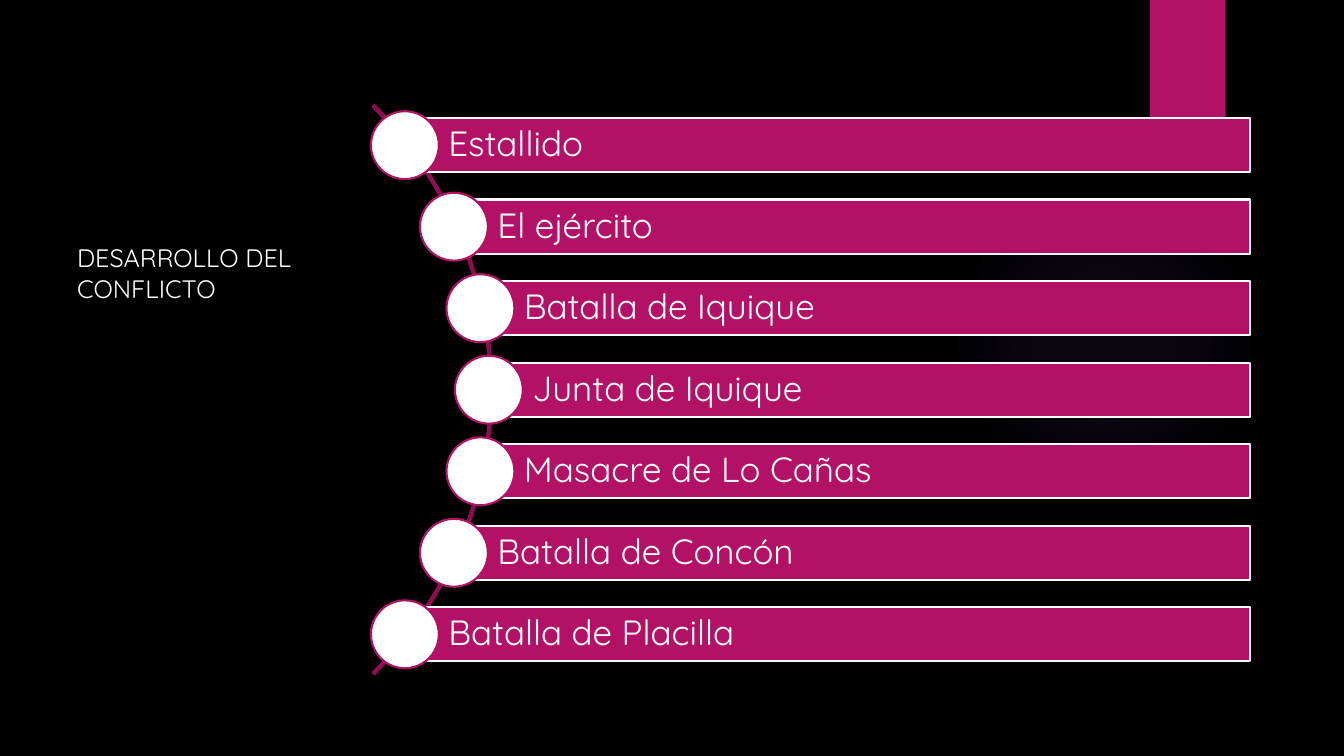
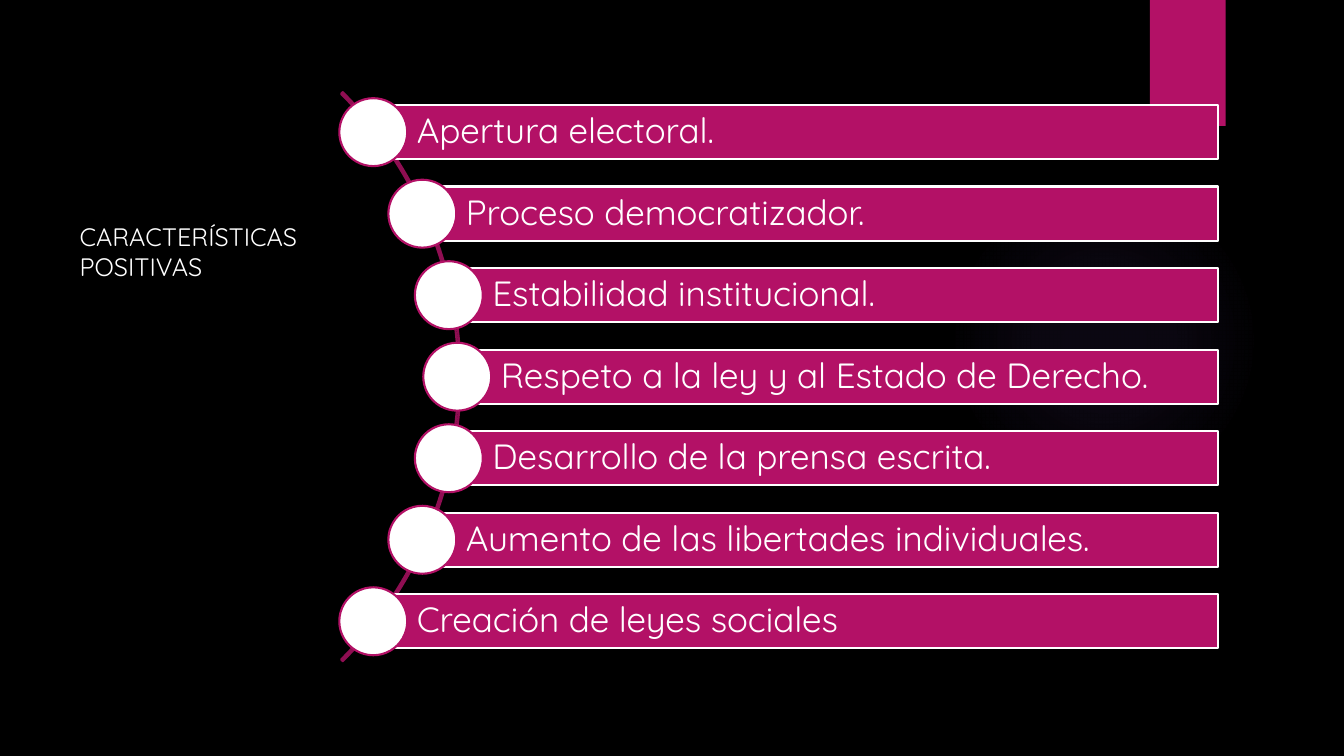
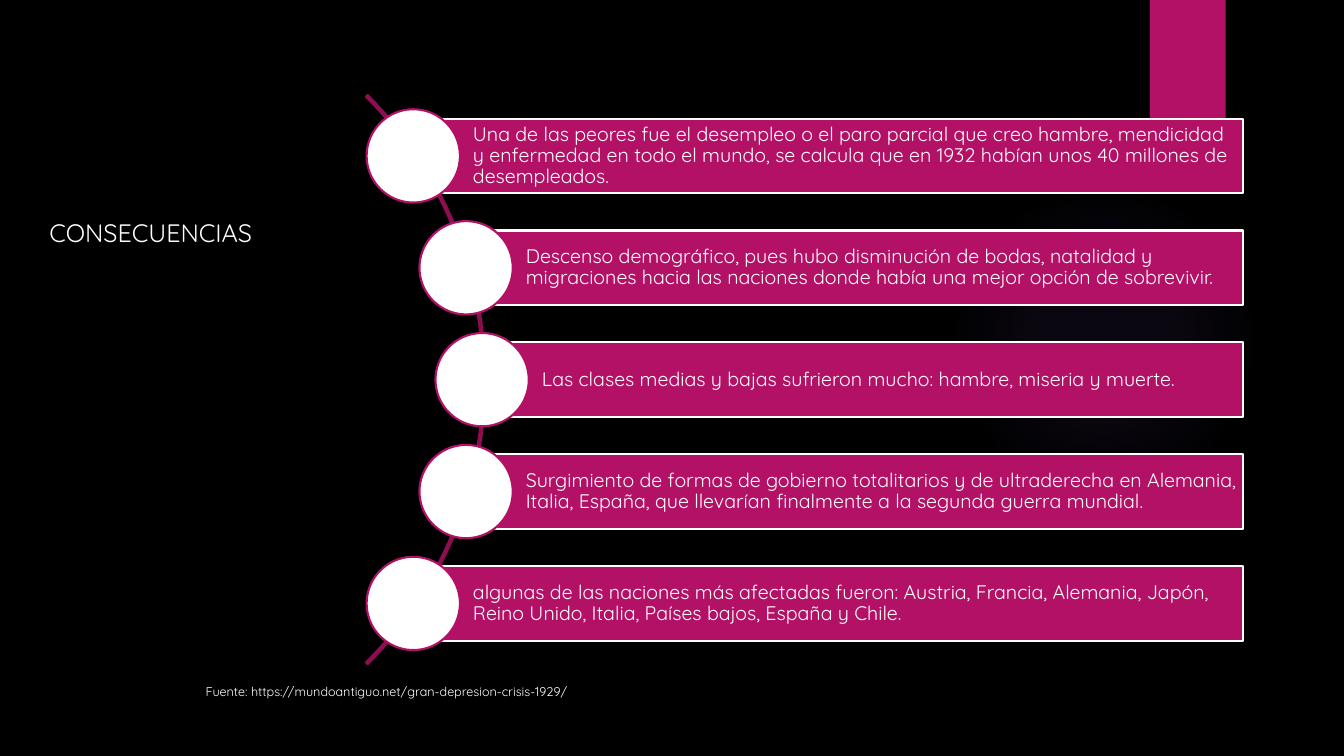
from math import sqrt

from lxml.etree import SubElement
from pptx import Presentation
from pptx.dml.color import RGBColor
from pptx.enum.shapes import MSO_SHAPE
from pptx.enum.text import MSO_ANCHOR, PP_ALIGN
from pptx.oxml.ns import qn
from pptx.util import Emu, Inches, Pt

# The slide is a grid of 160 columns by 90 rows of square cells.
COLS, ROWS = 160, 90
CELL = 76200
FONT = "Quicksand"
BLACK, WHITE, PINK, PLUM, GLOW = "000000", "FFFFFF", "B31166", "8F0E52", "9B6BF2"
BEND = 47.4   # radius of the curve that the dots follow
REACH = 138   # from the centre of the curve to the right end of the bars


def cells(count):
    return Emu(round(count * CELL))


def paint(target, tint):
    target.solid()
    target.fore_color.rgb = RGBColor.from_string(tint)


def add_form(slide, kind, box, fill=None, line=None):
    form = slide.shapes.add_shape(kind, *map(cells, box))
    form.shadow.inherit = False
    if fill:
        paint(form.fill, fill)
    else:
        form.fill.background()
    if line:
        paint(form.line.fill, line)
        form.line.width = Pt(1.5)
    else:
        form.line.fill.background()
    return form


def add_run(para, text, size):
    run = para.add_run()
    run.text = text
    run.font.name = FONT
    run.font.size = Pt(size)
    paint(run.font.fill, WHITE)


def add_label(slide, box, text, size):
    frame = slide.shapes.add_textbox(*map(cells, box)).text_frame
    frame.word_wrap = True
    add_run(frame.paragraphs[0], text, size)


def add_glow(slide):
    """Soft round light that fades out towards its rim."""
    orb = add_form(slide, MSO_SHAPE.OVAL, (112.9, 22, 37, 37), GLOW)
    props = orb.fill._xPr
    old = props.find(qn("a:solidFill"))
    grad = props.makeelement(qn("a:gradFill"), {"rotWithShape": "1"})
    props.replace(old, grad)
    stops = SubElement(grad, qn("a:gsLst"))
    for place, alpha in ((0, 7), (36, 6), (69, 0)):
        stop = SubElement(stops, qn("a:gs"), pos=str(place * 1000))
        tint = SubElement(stop, qn("a:srgbClr"), val=GLOW)
        SubElement(tint, qn("a:alpha"), val=str(alpha * 1000))
    ring = SubElement(grad, qn("a:path"), path="circle")
    SubElement(ring, qn("a:fillToRect"), l="50000", t="50000", r="50000", b="50000")


def add_page(deck, title, box):
    slide = deck.slides.add_slide(deck.slide_layouts[6])
    add_glow(slide)
    add_form(slide, MSO_SHAPE.RECTANGLE, (136.9, 0, 9, 15), PINK)
    add_label(slide, box, title, 18)
    return slide


def add_bar(slide, box, text, size):
    bar = add_form(slide, MSO_SHAPE.RECTANGLE, box, PINK, WHITE)
    frame = bar.text_frame
    frame.word_wrap = True
    frame.vertical_anchor = MSO_ANCHOR.MIDDLE
    frame.margin_left = cells(box[3] * 0.8)
    frame.margin_right = frame.margin_top = frame.margin_bottom = Inches(size / 360)
    para = frame.paragraphs[0]
    para.alignment = PP_ALIGN.LEFT
    para.line_spacing = 0.9
    add_run(para, text, size)


def add_curve(slide, mid, tall, size, items):
    """Bars of height tall, each led by a dot on an arc centred at mid."""
    left, top = mid
    arc = add_form(slide, MSO_SHAPE.BLOCK_ARC, (left - 48, top - 47.9, 95.8, 95.8), None, PLUM)
    for i, value in enumerate((189, 27, 0.3 / 100)):
        arc.adjustments[i] = value
    dot = tall * 1.25
    for i, text in enumerate(items):
        drop = (i - (len(items) - 1) / 2) * tall * 1.5
        x, y = left + sqrt(BEND ** 2 - drop ** 2), top + drop
        add_bar(slide, (x, y - tall / 2, left + REACH - x, tall), text, size)
        add_form(slide, MSO_SHAPE.OVAL, (x - dot / 2, y - dot / 2, dot, dot), WHITE, PINK)


def main():
    deck = Presentation()
    deck.slide_width, deck.slide_height = cells(COLS), cells(ROWS)
    paint(deck.slide_master.background.fill, BLACK)

    war = add_page(deck, "DESARROLLO DEL CONFLICTO", (8, 28.3, 38.5, 8.5))
    add_curve(war, (10.8, 46.4), 6.47, 25, [
        "Estallido",
        "El ejército",
        "Batalla de Iquique",
        "Junta de Iquique",
        "Masacre de Lo Cañas",
        "Batalla de Concón",
        "Batalla de Placilla",
    ])

    gains = add_page(deck, "CARACTERÍSTICAS POSITIVAS", (8.3, 25.7, 34, 8.5))
    add_curve(gains, (7.04, 44.85), 6.47, 25, [
        "Apertura electoral.",
        "Proceso democratizador.",
        "Estabilidad institucional.",
        "Respeto a la ley y al Estado de Derecho.",
        "Desarrollo de la prensa escrita.",
        "Aumento de las libertades individuales.",
        "Creación de leyes sociales",
    ])

    slump = add_page(deck, "CONSECUENCIAS", (4.7, 25.3, 35.3, 4.8))
    add_curve(slump, (10, 45.2), 8.88, 14, [
        "Una de las peores fue el desempleo o el paro parcial que creo hambre, "
        "mendicidad y enfermedad en todo el mundo, se calcula que en 1932 habían "
        "unos 40 millones de desempleados.",
        "Descenso demográfico, pues hubo disminución de bodas, natalidad y "
        "migraciones hacia las naciones donde había una mejor opción de sobrevivir.",
        "Las clases medias y bajas sufrieron mucho: hambre, miseria y muerte.",
        "Surgimiento de formas de gobierno totalitarios y de ultraderecha en "
        "Alemania, Italia, España, que llevarían finalmente a la segunda guerra mundial.",
        "algunas de las naciones más afectadas fueron: Austria, Francia, Alemania, "
        "Japón, Reino Unido, Italia, Países bajos, España y Chile.",
    ])
    add_label(slump, (23.3, 80.8, 102, 3),
              "Fuente: https://mundoantiguo.net/gran-depresion-crisis-1929/", 9)

    deck.save("out.pptx")


if __name__ == "__main__":
    main()
